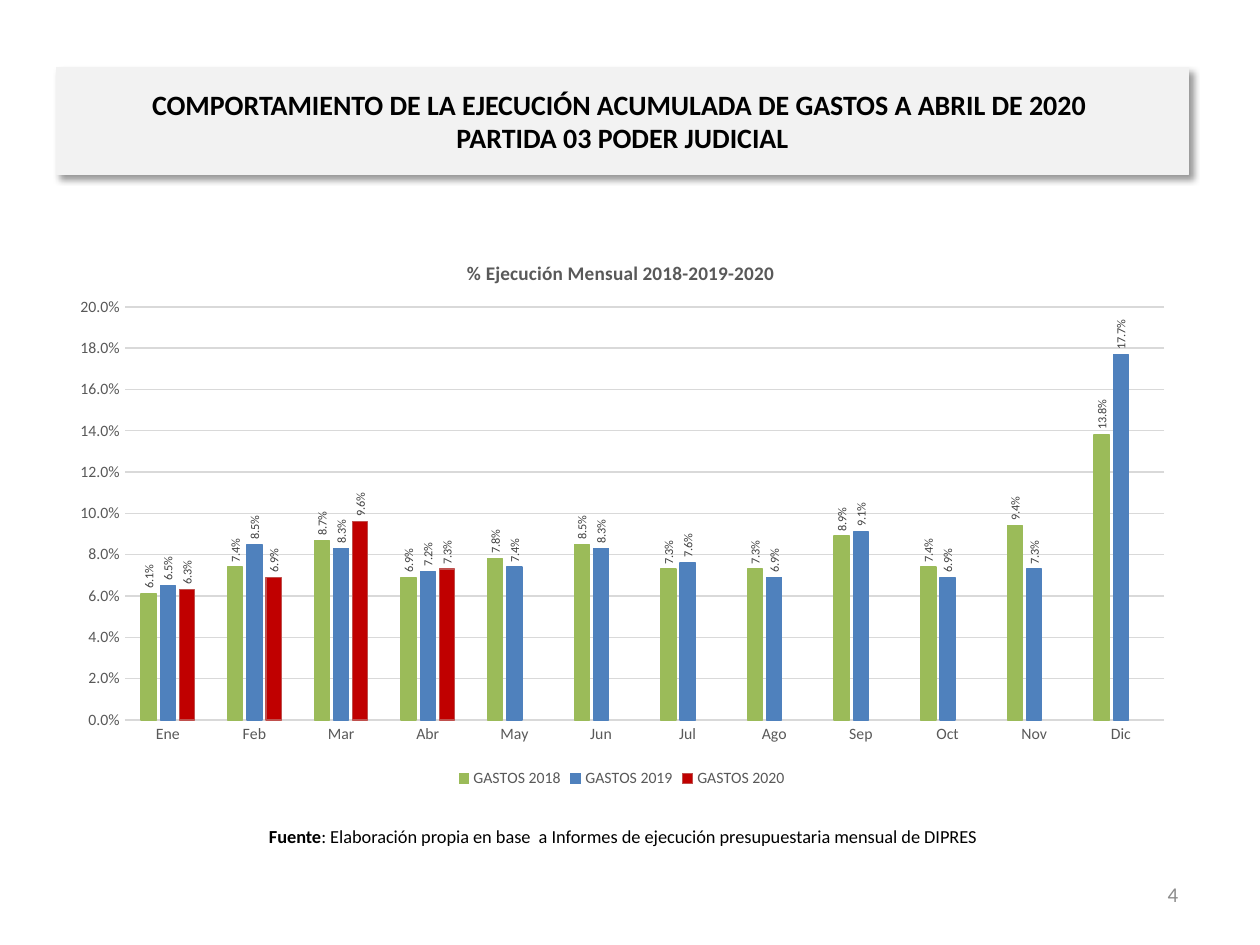
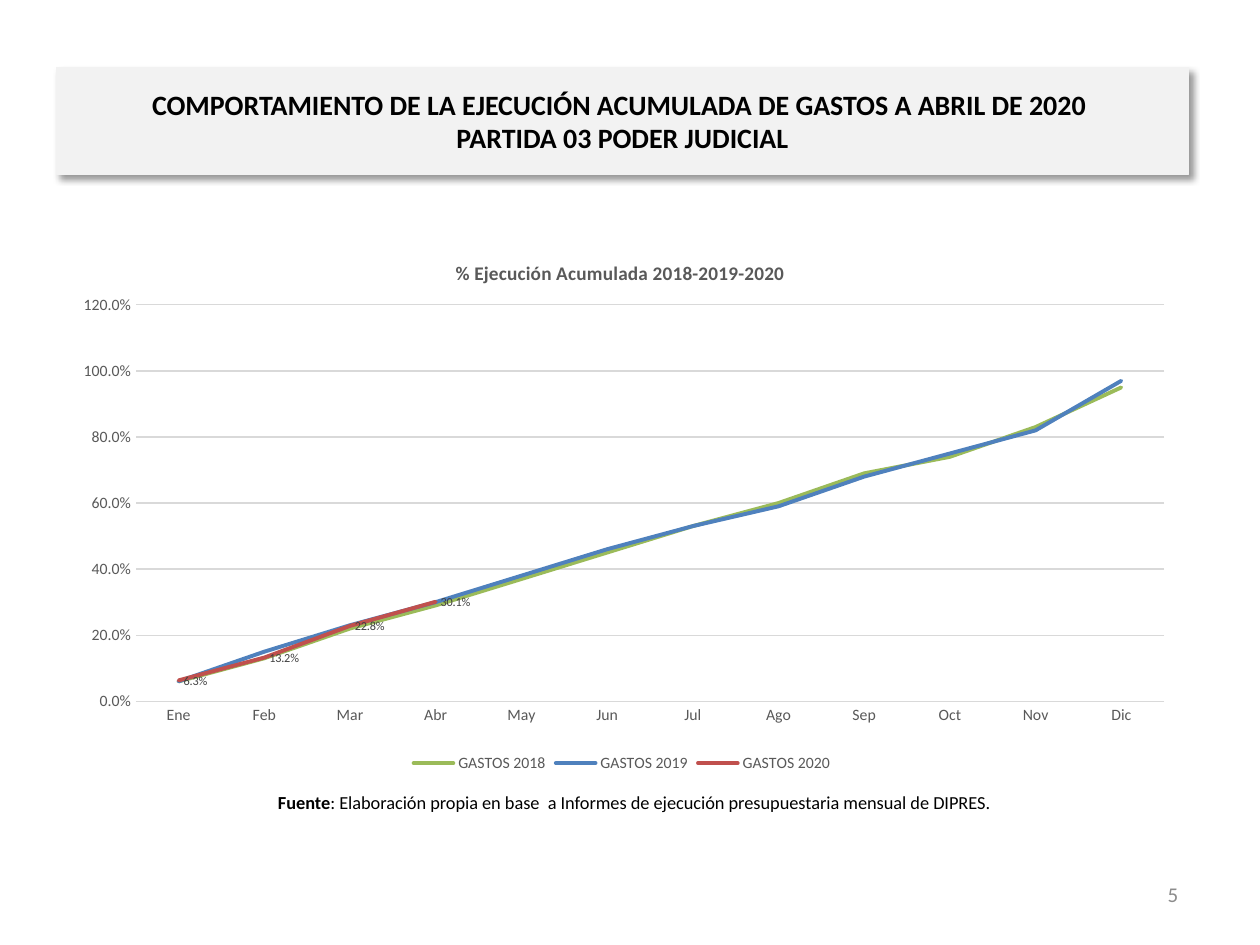
"""Build two slides on the monthly and accumulated spending of Partida 03."""
import pptx
import pptx.util
import pptx.chart.data
import pptx.dml.color
import pptx.enum.chart
import pptx.enum.text
import pptx.oxml
import pptx.oxml.ns
from lxml import etree

Pt = pptx.util.Pt
qn = pptx.oxml.ns.qn
RGB = pptx.dml.color.RGBColor.from_string
ALIGN = pptx.enum.text.PP_ALIGN
MIDDLE = pptx.enum.text.MSO_ANCHOR.MIDDLE
KIND = pptx.enum.chart.XL_CHART_TYPE
LABEL = pptx.enum.chart.XL_LABEL_POSITION

FONT = "Calibri"
COLORS = {
    "band": "F2F2F2", "text": "000000", "number": "8C8C8C",
    "axis": "595959", "grid": "D9D9D9", "label": "404040",
    "2018": "9BBB59", "2019": "4F81BD", "2020": "C0504D", "2020 bar": "C00000",
}
TITLE = ("COMPORTAMIENTO DE LA EJECUCIÓN ACUMULADA DE GASTOS A ABRIL DE 2020 \v"
         "PARTIDA 03 PODER JUDICIAL")
SOURCE = ": Elaboración propia en base  a Informes de ejecución presupuestaria mensual de DIPRES"
MONTHS = ["Ene", "Feb", "Mar", "Abr", "May", "Jun", "Jul", "Ago", "Sep", "Oct", "Nov", "Dic"]
SHADOW = (
    f'<a:outerShdw xmlns:a="{pptx.oxml.ns.nsuri("a")}" blurRad="50800" dist="38100" '
    'dir="2700000" algn="tl" rotWithShape="0">'
    '<a:srgbClr val="000000"><a:alpha val="40000"/></a:srgbClr></a:outerShdw>'
)

SLIDES = [
    {
        "number": "4", "kind": KIND.COLUMN_CLUSTERED, "height": 319,
        "title": "% Ejecución Mensual 2018-2019-2020",
        "title_at": {"x": 0.36, "y": 0.04},
        "plot_at": {"x": 0.06, "y": 0.13, "w": 0.92, "h": 0.74},
        "max": 0.2, "step": 0.02,
        "source": SOURCE, "source_at": (25.2, 463.7),
        "values": {
            "2018": [0.061, 0.074, 0.087, 0.069, 0.078, 0.085,
                     0.073, 0.073, 0.089, 0.074, 0.094, 0.138],
            "2019": [0.065, 0.085, 0.083, 0.072, 0.074, 0.083,
                     0.076, 0.069, 0.091, 0.069, 0.073, 0.177],
            "2020": [0.063, 0.069, 0.096, 0.073],
        },
    },
    {
        "number": "5", "kind": KIND.LINE, "height": 310.3,
        "title": "% Ejecución Acumulada 2018-2019-2020",
        "title_at": {"x": 0.35, "y": 0.04},
        "plot_at": {"x": 0.07, "y": 0.13, "w": 0.91, "h": 0.73},
        "max": 1.2, "step": 0.2,
        "source": SOURCE + ".", "source_at": (31.7, 444.2),
        "values": {
            "2018": [0.06, 0.13, 0.22, 0.29, 0.37, 0.45, 0.53, 0.6, 0.69, 0.74, 0.83, 0.95],
            "2019": [0.06, 0.15, 0.23, 0.3, 0.38, 0.46, 0.53, 0.59, 0.68, 0.75, 0.82, 0.97],
            "2020": [0.063, 0.132, 0.228, 0.301],
        },
    },
]


def style_font(font, size, color, bold=False):
    font.name = FONT
    font.size = Pt(size)
    font.bold = bold
    font.color.rgb = RGB(COLORS[color])


def place_in_chart(parent, index, at):
    for old in parent.findall(qn("c:layout")):
        parent.remove(old)
    layout = etree.Element(qn("c:layout"))
    manual = etree.SubElement(layout, qn("c:manualLayout"))
    if "w" in at:
        etree.SubElement(manual, qn("c:layoutTarget"), val="inner")
    for key in ("x", "y"):
        etree.SubElement(manual, qn(f"c:{key}Mode"), val="edge")
    for key, value in at.items():
        etree.SubElement(manual, qn(f"c:{key}"), val=str(value))
    parent.insert(index, layout)


prs = pptx.Presentation()
prs.slide_width, prs.slide_height = Pt(720), Pt(540)

for spec_ in SLIDES:
    s = prs.slides.add_slide(prs.slide_layouts[5])

    sp = s.shapes.title
    sp.left, sp.top, sp.width, sp.height = Pt(32.4), Pt(38.4), Pt(646.6), Pt(61.2)
    sp.fill.solid()
    sp.fill.fore_color.rgb = RGB(COLORS["band"])
    sp.line.color.rgb = RGB(COLORS["band"])
    sp.line.width = Pt(0.75)
    sp.shadow.inherit = False
    effects = sp.element.spPr.find(qn("a:effectLst"))
    effects.append(pptx.oxml.parse_xml(SHADOW))
    tf = sp.text_frame
    tf.text = TITLE
    tf.word_wrap = True
    tf.auto_size = pptx.enum.text.MSO_AUTO_SIZE.NONE
    tf.vertical_anchor = MIDDLE
    tf.paragraphs[0].alignment = ALIGN.CENTER
    for r in tf.paragraphs[0].runs:
        style_font(r.font, 16, "text", True)

    left, top = spec_["source_at"]
    boxes = [
        (left, top, 661.7, ALIGN.CENTER,
         [("Fuente", 10.5, "text", True), (spec_["source"], 10.5, "text", False)]),
        (512.6, 496.8, 167.8, ALIGN.RIGHT, [(spec_["number"], 12, "number", False)]),
    ]
    for left, top, width, align, runs in boxes:
        tf = s.shapes.add_textbox(Pt(left), Pt(top), Pt(width), Pt(28.8)).text_frame
        tf.word_wrap = True
        tf.vertical_anchor = MIDDLE
        p = tf.paragraphs[0]
        p.alignment = align
        for text, size, color, bold in runs:
            r = p.add_run()
            r.text = text
            style_font(r.font, size, color, bold)

    data = pptx.chart.data.CategoryChartData(number_format="0.0%")
    data.categories = MONTHS
    for year, values in spec_["values"].items():
        data.add_series(f"GASTOS {year}", values + [None] * (len(MONTHS) - len(values)))
    chart = s.shapes.add_chart(spec_["kind"], Pt(32.4), Pt(133.9), Pt(645.8),
                               Pt(spec_["height"]), data).chart
    style_font(chart.font, 10, "text")

    chart.has_title = True
    tf = chart.chart_title.text_frame
    tf.text = spec_["title"]
    style_font(tf.paragraphs[0].runs[0].font, 11, "axis", True)
    chart.chart_title.include_in_layout = False
    place_in_chart(chart.element.find(".//" + qn("c:title")), 1, spec_["title_at"])
    place_in_chart(chart.element.find(".//" + qn("c:plotArea")), 0, spec_["plot_at"])

    chart.has_legend = True
    chart.legend.position = pptx.enum.chart.XL_LEGEND_POSITION.BOTTOM
    chart.legend.include_in_layout = False
    style_font(chart.legend.font, 9, "axis")

    for axis in (chart.category_axis, chart.value_axis):
        axis.major_tick_mark = axis.minor_tick_mark = pptx.enum.chart.XL_TICK_MARK.NONE
        style_font(axis.tick_labels.font, 9, "axis")
    grid = chart.value_axis.major_gridlines
    for line in (chart.category_axis.format.line, grid.format.line):
        line.color.rgb = RGB(COLORS["grid"])
        line.width = Pt(0.75)
    axis = chart.value_axis
    axis.format.line.fill.background()
    axis.minimum_scale, axis.maximum_scale = 0, spec_["max"]
    axis.major_unit = spec_["step"]
    axis.tick_labels.number_format = "0.0%"
    axis.tick_labels.number_format_is_linked = False

    plot = chart.plots[0]
    plot.vary_by_categories = False
    is_bar = spec_["kind"] == KIND.COLUMN_CLUSTERED
    if is_bar:
        plot.gap_width, plot.overlap = 219, -27
    for year, series in zip(spec_["values"], plot.series):
        series.format.line.color.rgb = RGB(COLORS[year])
        series.format.line.width = Pt(0.75 if is_bar else 2.25)
        if is_bar:
            series.invert_if_negative = False
            series.format.fill.solid()
            series.format.fill.fore_color.rgb = RGB(COLORS.get(f"{year} bar", COLORS[year]))
        else:
            series.smooth = False
            series.format.line._ln.set("cap", "rnd")
        if is_bar or year == "2020":
            labels = series.data_labels
            labels.show_value = True
            labels.number_format = "0.0%"
            labels.number_format_is_linked = False
            labels.position = LABEL.OUTSIDE_END if is_bar else LABEL.RIGHT
            style_font(labels.font, 7, "label")
            if is_bar:
                body = labels._element.find(".//" + qn("a:bodyPr"))
                body.set("rot", "-5400000")
                body.set("vert", "horz")

prs.save("out.pptx")
